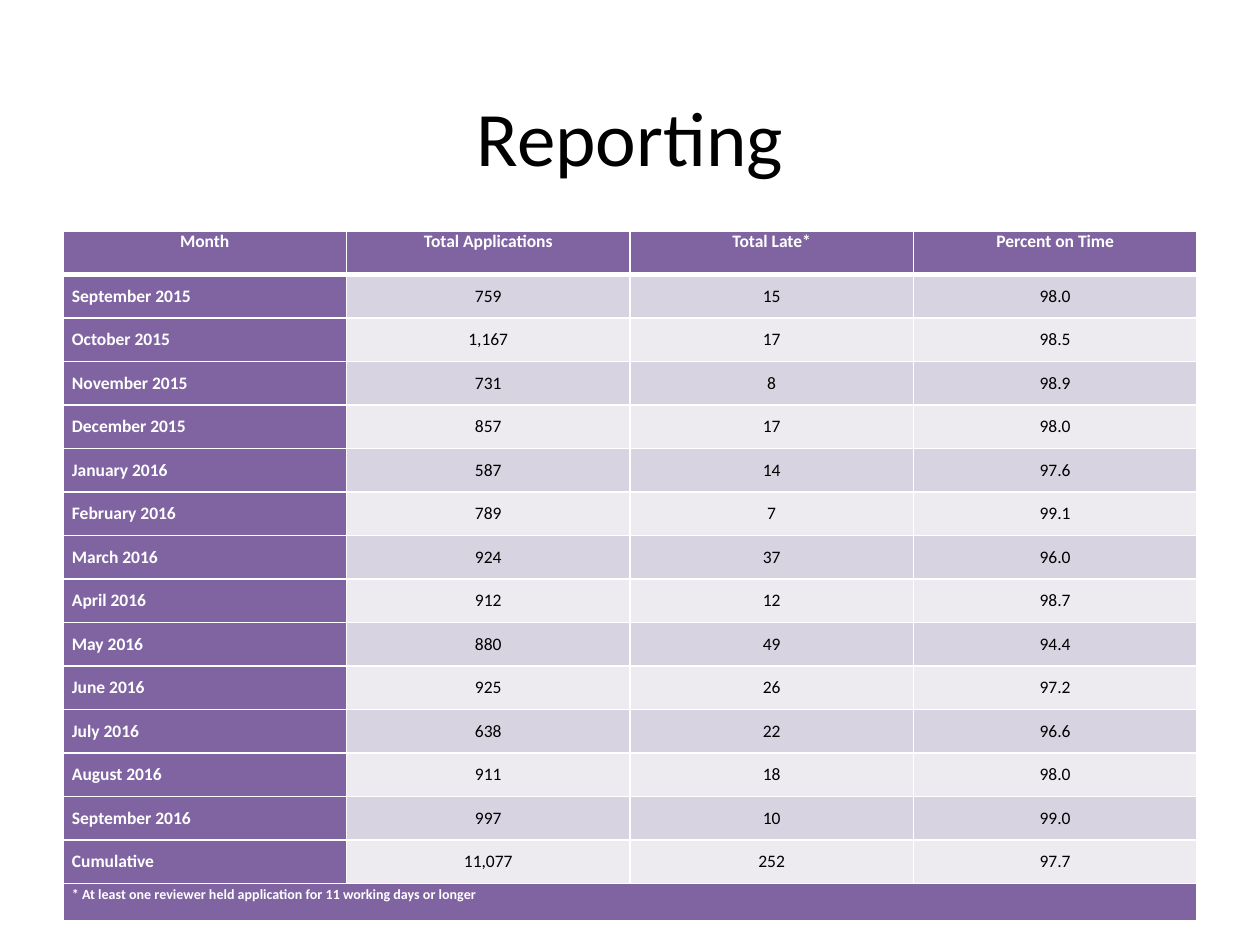
import pptx
import pptx.util
import pptx.dml.color
import pptx.enum.text
import pptx.oxml
import pptx.oxml.ns

PX = 914400 // 126
ALIGN = pptx.enum.text.PP_ALIGN
ANCHOR = pptx.enum.text.MSO_ANCHOR
PURPLE, WHITE, BLACK = "8064A2", "FFFFFF", "000000"
BANDS = ["D8D3E0", "EDEAF0"]


def add_run(paragraph, text, size, color, bold=False):
    run = paragraph.add_run()
    run.text = text
    run.font.name = "Calibri"
    run.font.size = pptx.util.Pt(size)
    run.font.bold = bold
    run.font.color.rgb = pptx.dml.color.RGBColor.from_string(color)


def style_cell(cell, fill, bottom_width=1):
    cell.margin_left = cell.margin_right = 9 * PX
    cell.margin_top = cell.margin_bottom = 0
    properties = cell._tc.get_or_add_tcPr()
    for side, width in (("L", 1), ("R", 1), ("T", 1), ("B", bottom_width)):
        properties.append(pptx.oxml.parse_xml(
            f'<a:ln{side} {pptx.oxml.ns.nsdecls("a")} w="{pptx.util.Pt(width)}">'
            f'<a:solidFill><a:srgbClr val="{WHITE}"/></a:solidFill></a:ln{side}>'))
    cell.fill.solid()
    cell.fill.fore_color.rgb = pptx.dml.color.RGBColor.from_string(fill)


presentation = pptx.Presentation()
presentation.slide_width = 1260 * PX
presentation.slide_height = 945 * PX
slide = presentation.slides.add_slide(presentation.slide_layouts[6])

# Title
title = slide.shapes.add_textbox(0, 94 * PX, 1260 * PX, 136 * PX)
title.text_frame.word_wrap = True
title.text_frame.vertical_anchor = ANCHOR.TOP
paragraph = title.text_frame.paragraphs[0]
paragraph.alignment = ALIGN.CENTER
paragraph.line_spacing = 0.9
add_run(paragraph, "Reporting", 44, BLACK)

# Monthly figures
rows = [
    ("Month", "Total Applications", "Total Late*", "Percent on Time"),
    ("September 2015", "759", "15", "98.0"),
    ("October 2015", "1,167", "17", "98.5"),
    ("November 2015", "731", "8", "98.9"),
    ("December 2015", "857", "17", "98.0"),
    ("January 2016", "587", "14", "97.6"),
    ("February 2016", "789", "7", "99.1"),
    ("March 2016", "924", "37", "96.0"),
    ("April 2016", "912", "12", "98.7"),
    ("May 2016", "880", "49", "94.4"),
    ("June 2016", "925", "26", "97.2"),
    ("July 2016", "638", "22", "96.6"),
    ("August 2016", "911", "18", "98.0"),
    ("September 2016", "997", "10", "99.0"),
    ("Cumulative", "11,077", "252", "97.7"),
]
columns = len(rows[0])
note_height = 37 * PX
row_height = (690 * PX - note_height) // len(rows)
table = slide.shapes.add_table(len(rows) + 1, columns, 63 * PX, 231 * PX,
                               1134 * PX, 690 * PX).table
for row in table.rows:
    row.height = row_height
table.rows[len(rows)].height = note_height

for row_index, values in enumerate(rows):
    is_header = row_index == 0
    for column_index, value in enumerate(values):
        is_label = is_header or column_index == 0
        cell = table.cell(row_index, column_index)
        style_cell(cell, PURPLE if is_label else BANDS[(row_index - 1) % 2],
                   3 if is_header else 1)
        cell.vertical_anchor = ANCHOR.TOP if is_header else ANCHOR.MIDDLE
        paragraph = cell.text_frame.paragraphs[0]
        paragraph.alignment = ALIGN.CENTER if is_header or column_index else ALIGN.LEFT
        paragraph.space_after = pptx.util.Pt(6 if is_header else 3)
        add_run(paragraph, value, 10, WHITE if is_label else BLACK, is_label)

# Footnote across the last row
note = table.cell(len(rows), 0)
note.merge(table.cell(len(rows), columns - 1))
style_cell(note, PURPLE)
paragraph = note.text_frame.paragraphs[0]
paragraph.alignment = ALIGN.JUSTIFY
paragraph.line_spacing = 1.15
paragraph.space_after = pptx.util.Pt(3)
add_run(paragraph, "* At least one reviewer held application for 11 working days or longer",
        8, WHITE, True)

presentation.save("out.pptx")
